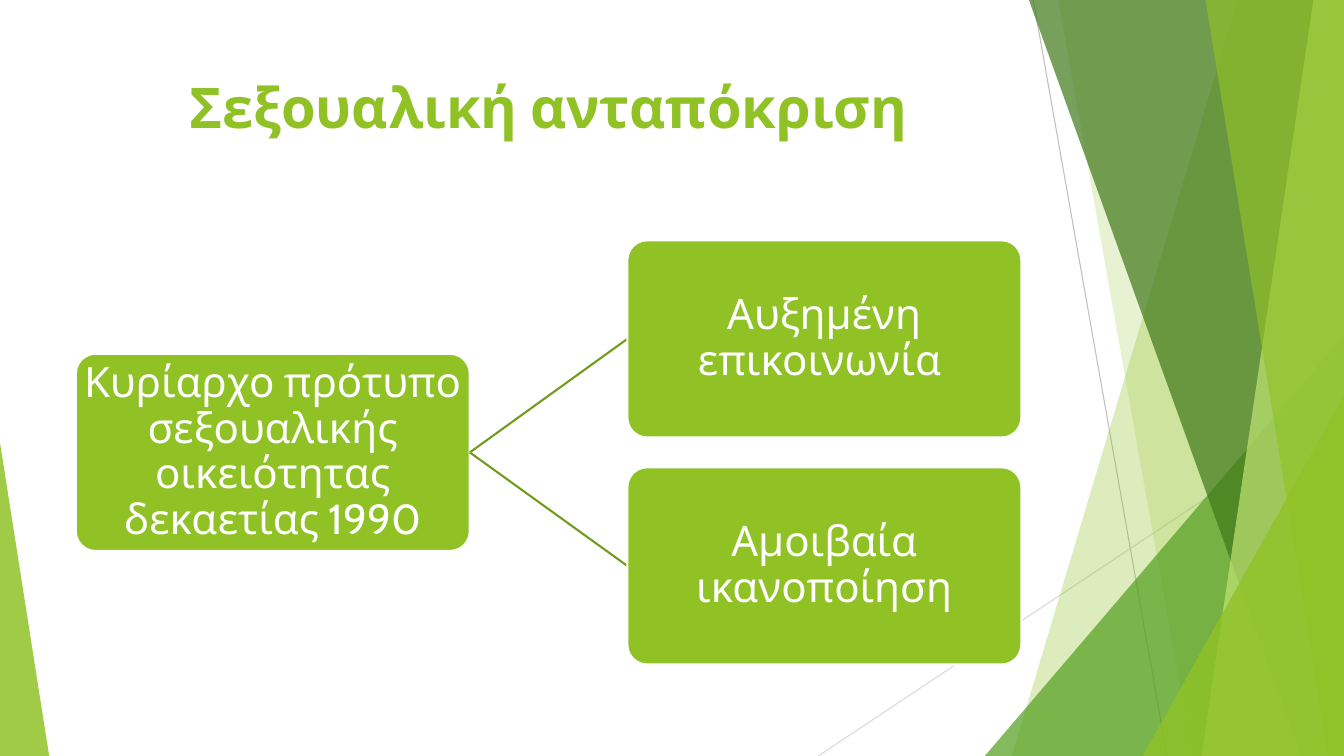
from lxml.etree import SubElement
from pptx import Presentation
from pptx.dml.color import RGBColor
from pptx.enum.shapes import MSO_CONNECTOR, MSO_SHAPE
from pptx.enum.text import MSO_ANCHOR, PP_ALIGN
from pptx.oxml.ns import qn
from pptx.util import Cm, Pt

WIDE, HIGH = 33.87, 19.05
WHITE = RGBColor(0xFF, 0xFF, 0xFF)
LIME = RGBColor(0x90, 0xC2, 0x26)
OLIVE = RGBColor(0x73, 0x9B, 0x1E)
GREEN = RGBColor(0x54, 0xA0, 0x21)
DARK = RGBColor(0x3F, 0x78, 0x19)
PALE = RGBColor(0xC0, 0xE4, 0x74)
GREY = RGBColor(0xBF, 0xBF, 0xBF)
SILVER = RGBColor(0xD9, 0xD9, 0xD9)


def write(frame, text, size=30, color=WHITE, bold=False, font="Cabin",
          anchor=MSO_ANCHOR.MIDDLE, inset=0.05, space=0.9):
    frame.word_wrap = True
    frame.vertical_anchor = anchor
    frame.margin_left = frame.margin_right = Cm(inset)
    frame.margin_top = frame.margin_bottom = Cm(inset)
    line = frame.paragraphs[0]
    line.alignment = PP_ALIGN.CENTER
    line.line_spacing = space
    run = line.add_run()
    run.text = text
    run.font.name = font
    run.font.size = Pt(size)
    run.font.bold = bold
    run.font.color.rgb = color


class Painter:
    def __init__(self, slide):
        self.shapes = slide.shapes

    def fill(self, shape, color, alpha=100):
        shape.shadow.inherit = False
        shape.fill.solid()
        shape.fill.fore_color.rgb = color
        shape.line.fill.background()
        if alpha < 100:
            tone = shape.fill._xPr.find(qn("a:solidFill"))[0]
            SubElement(tone, qn("a:alpha")).set("val", str(alpha * 1000))

    def line(self, x1, y1, x2, y2, color, width):
        line = self.shapes.add_connector(
            MSO_CONNECTOR.STRAIGHT, Cm(x1), Cm(y1), Cm(x2), Cm(y2))
        line.line.color.rgb = color
        line.line.width = Pt(width)
        SubElement(line._element.spPr, qn("a:effectLst"))

    def facet(self, top, base, color, alpha):
        form = self.shapes.build_freeform(Cm(top), 0)
        edge = [(WIDE, 0), (WIDE, HIGH), (base, HIGH)]
        form.add_line_segments([(Cm(x), Cm(y)) for x, y in edge])
        self.fill(form.convert_to_shape(), color, alpha)

    def wedge(self, left, top, width, apex, color, alpha):
        shape = self.shapes.add_shape(
            MSO_SHAPE.ISOSCELES_TRIANGLE,
            Cm(left), Cm(top), Cm(width), Cm(HIGH - top))
        shape.adjustments[0] = apex
        self.fill(shape, color, alpha)

    def title(self, text):
        box = self.shapes.add_textbox(Cm(1.88), Cm(1.7), Cm(23.88), Cm(3.66))
        write(box.text_frame, text, size=40, color=LIME, bold=True,
              anchor=MSO_ANCHOR.TOP, inset=0.13, space=1)

    def card(self, left, top, width, height, text):
        shape = self.shapes.add_shape(
            MSO_SHAPE.ROUNDED_RECTANGLE,
            Cm(left), Cm(top), Cm(width), Cm(height))
        shape.adjustments[0] = 0.1
        self.fill(shape, LIME)
        shape.line.color.rgb = WHITE
        shape.line.width = Pt(1.5)
        write(shape.text_frame, text)


def main():
    deck = Presentation()
    deck.slide_width, deck.slide_height = Cm(WIDE), Cm(HIGH)
    paint = Painter(deck.slides.add_slide(deck.slide_layouts[6]))

    paint.line(26.04, 0, 29.41, HIGH, GREY, 0.75)
    paint.line(WIDE, 10.24, 20.62, HIGH, SILVER, 0.75)
    paint.facet(31.19, 25.5, LIME, 30)
    paint.facet(26.67, 30.05, LIME, 20)
    paint.wedge(24.82, 8.46, 9.05, 1, GREEN, 72)
    paint.facet(25.93, 32.79, DARK, 70)
    paint.facet(33.1, 30.28, PALE, 70)
    paint.facet(30.38, 33.48, LIME, 65)
    paint.wedge(28.8, 9.98, 5.07, 1, LIME, 80)
    paint.wedge(0, 11.15, 1.24, 0, LIME, 85)

    paint.title("Σεξουαλική ανταπόκριση")

    width, height, gap = 9.93, 4.97, 0.75
    root, leaf, middle = 1.91, 15.81, 11.4
    paint.card(root, middle - height / 2, width, height,
               "Κυρίαρχο πρότυπο σεξουαλικής οικειότητας δεκαετίας 1990")
    tops = (middle - gap / 2 - height, middle + gap / 2)
    for top, text in zip(tops, ("Αυξημένη επικοινωνία ", "Αμοιβαία ικανοποίηση")):
        paint.line(root + width, middle, leaf, top + height / 2, OLIVE, 1.5)
        paint.card(leaf, top, width, height, text)

    deck.save("out.pptx")


if __name__ == "__main__":
    main()
